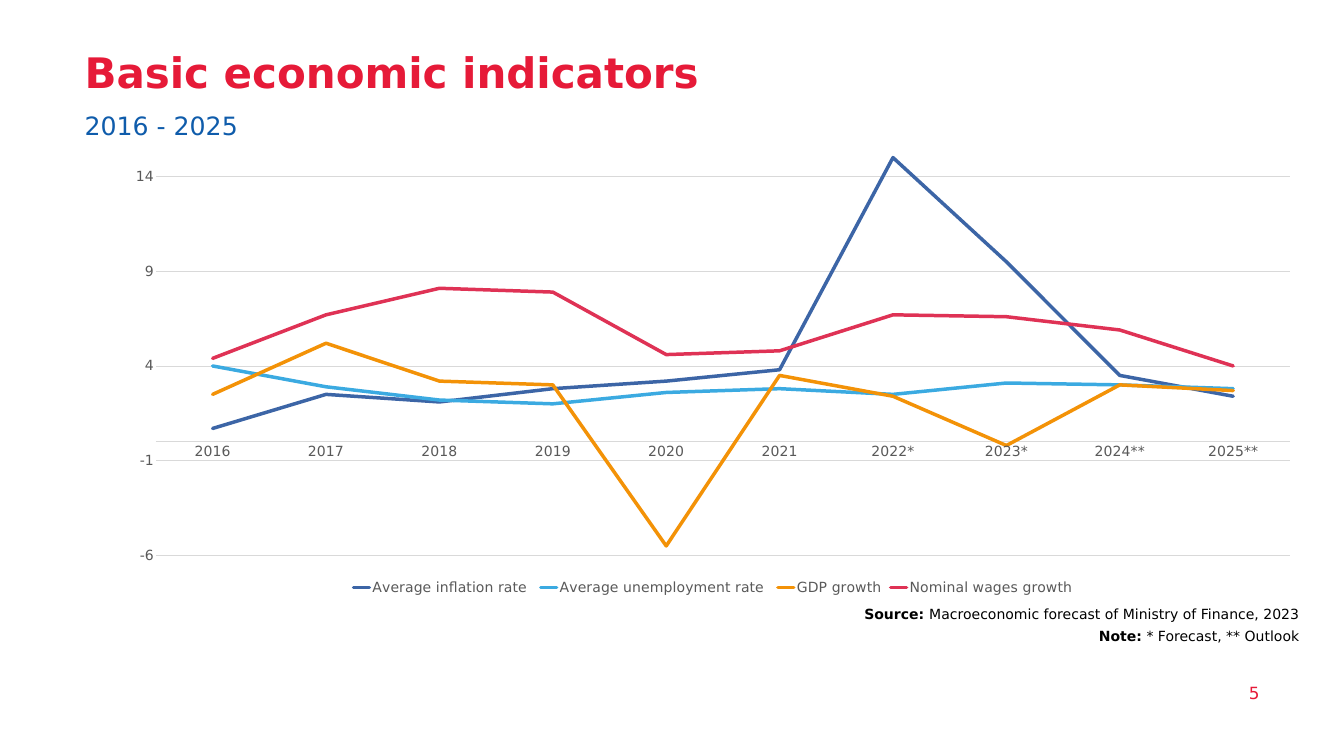
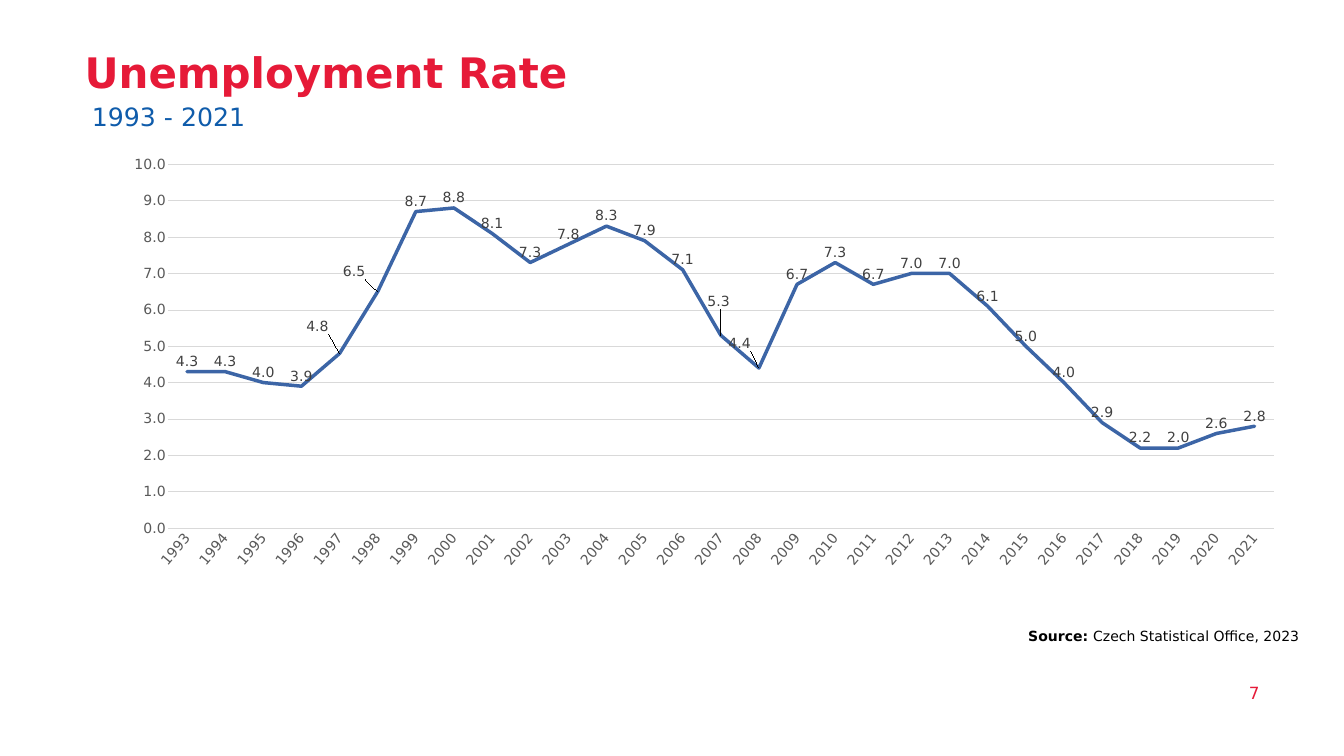
"""Build two slides of line charts on economic indicators."""
from dataclasses import dataclass, field
from typing import NamedTuple

from pptx import Presentation
from pptx import util as u
from pptx.chart import data as chart_data
from pptx.dml.color import RGBColor
from pptx.enum import chart as charts
from pptx.enum import text
from pptx.oxml import ns, parse_xml

PX = 9525
FONT = "DejaVu Sans"
RED = RGBColor(0xE6, 0x1A, 0x38)
BLUE = RGBColor(0x0F, 0x5C, 0xAB)
BLACK = RGBColor(0, 0, 0)
AXIS_GREY = RGBColor(0x59, 0x59, 0x59)
LABEL_GREY = RGBColor(0x40, 0x40, 0x40)
GRID_GREY = RGBColor(0xD9, 0xD9, 0xD9)
NAVY = RGBColor(0x3C, 0x65, 0xA6)
SKY = RGBColor(0x3B, 0xAA, 0xE1)
ORANGE = RGBColor(0xF3, 0x92, 0x07)
ROSE = RGBColor(0xDF, 0x32, 0x55)
NO_LEADER_LINES = (
    f'<c:extLst {ns.nsdecls("c")}><c:ext uri="{{CE6537A1-D6FC-4f65-9D91-7224C49458BB}}" '
    'xmlns:c15="http://schemas.microsoft.com/office/drawing/2012/chart">'
    '<c15:showLeaderLines val="0"/></c:ext></c:extLst>')


class Box(NamedTuple):
    left: int
    top: int
    width: int
    height: int

    def emu(self) -> list[u.Emu]:
        return [u.Emu(length * PX) for length in self]


class Line(NamedTuple):
    name: str
    color: RGBColor
    values: list[float]


class Scale(NamedTuple):
    minimum: int
    maximum: int
    step: int
    number_format: str


@dataclass
class LineChart:
    kind: charts.XL_CHART_TYPE
    box: Box
    plot: Box
    scale: Scale
    categories: list[str]
    lines: list[Line]
    has_legend: bool = False
    label_angle: int = 0
    shows_values: bool = False
    label_shifts: dict[int, tuple[int, int]] = field(default_factory=dict)
    label_texts: dict[int, str] = field(default_factory=dict)


@dataclass
class ChartSlide:
    title: str
    subtitle: str
    subtitle_box: Box
    number: str
    notes: list[tuple[str, str]]
    chart: LineChart


TITLE_BOX = Box(161, 100, 2238, 185)
NUMBER_BOX = Box(2112, 1287, 287, 64)
NOTES_BOX = Box(214, 1142, 2261, 85)

SLIDES = [
    ChartSlide(
        "Basic economic indicators", "2016 - 2025", Box(161, 210, 2260, 64), "5",
        [("Source: ", "Macroeconomic forecast of Ministry of Finance, 2023"),
         ("Note:", " * Forecast, ** Outlook")],
        LineChart(
            charts.XL_CHART_TYPE.LINE, Box(214, 209, 2288, 931), Box(297, 228, 2160, 830),
            Scale(-6, 17, 5, "General"),
            [*map(str, range(2016, 2022)), "2022*", "2023*", "2024**", "2025**"],
            [Line("Average inflation rate ", NAVY,
                  [0.7, 2.5, 2.1, 2.8, 3.2, 3.8, 15, 9.5, 3.5, 2.4]),
             Line("Average unemployment rate ", SKY,
                  [4, 2.9, 2.2, 2, 2.6, 2.8, 2.5, 3.1, 3, 2.8]),
             Line("GDP growth", ORANGE,
                  [2.5, 5.2, 3.2, 3, -5.5, 3.5, 2.4, -0.2, 3, 2.7]),
             Line("Nominal wages growth", ROSE,
                  [4.4, 6.7, 8.1, 7.9, 4.6, 4.8, 6.7, 6.6, 5.9, 4])],
            has_legend=True)),
    ChartSlide(
        "Unemployment Rate", "1993 - 2021", Box(175, 193, 2260, 64), "7",
        [("Source: ", "Czech Statistical Office, 2023")],
        LineChart(
            charts.XL_CHART_TYPE.LINE_STACKED, Box(211, 282, 2260, 816),
            Box(320, 313, 2106, 693), Scale(0, 10, 1, "0.0"),
            [str(year) for year in range(1993, 2022)],
            [Line("Series 1", NAVY,
                  [4.3, 4.3, 4.0, 3.9, 4.8, 6.5, 8.7, 8.8, 8.1, 7.3,
                   7.8, 8.3, 7.9, 7.1, 5.3, 4.4, 6.7, 7.3, 6.7, 7.0,
                   7.0, 6.1, 5.0, 4.0, 2.9, 2.2, 2.2, 2.6, 2.8])],
            label_angle=-50, shows_values=True,
            label_shifts={4: (-42, -33), 5: (-45, -19), 14: (-4, -45), 15: (-37, -28)},
            label_texts={26: "2.0"})),
]


def style_font(font, size: int, color: RGBColor, bold: bool = False) -> None:
    """Give a font the shared face with a size, colour and weight."""
    font.name = FONT
    font.size = u.Pt(size)
    font.bold = bold
    font.color.rgb = color


def write_text(shape, box: Box, paragraphs: list[list[tuple[str, bool]]], size: int,
               color: RGBColor, anchor=text.MSO_ANCHOR.TOP,
               alignment=text.PP_ALIGN.LEFT, spacing: float = 1.0) -> None:
    """Place a shape and fill it with paragraphs of plain and bold runs."""
    shape.left, shape.top, shape.width, shape.height = box.emu()
    frame = shape.text_frame
    frame.word_wrap = True
    frame.auto_size = text.MSO_AUTO_SIZE.NONE
    frame.vertical_anchor = anchor
    frame.margin_left = frame.margin_top = frame.margin_right = frame.margin_bottom = 0
    for index, runs in enumerate(paragraphs):
        paragraph = frame.add_paragraph() if index else frame.paragraphs[0]
        paragraph.alignment = alignment
        paragraph.line_spacing = spacing
        paragraph.space_before = u.Pt(0)
        for words, bold in runs:
            run = paragraph.add_run()
            run.text = words
            style_font(run.font, size, color, bold)


def set_layout(parent, position: int, **settings) -> None:
    """Put a manual layout into a chart element."""
    for layout in parent.findall(ns.qn("c:layout")):
        parent.remove(layout)
    values = "".join(f'<c:{name} val="{value}"/>' for name, value in settings.items())
    parent.insert(position, parse_xml(
        f'<c:layout {ns.nsdecls("c")}><c:manualLayout>{values}</c:manualLayout></c:layout>'))


def style_axes(chart, content: LineChart) -> None:
    """Format both axes and the gridlines."""
    category_axis, value_axis = chart.category_axis, chart.value_axis
    for axis in (category_axis, value_axis):
        axis.major_tick_mark = axis.minor_tick_mark = charts.XL_TICK_MARK.NONE
        style_font(axis.tick_labels.font, 20, AXIS_GREY)
    if content.label_angle:
        body = category_axis._element.find(".//" + ns.qn("a:bodyPr"))
        body.set("rot", str(content.label_angle * 60000))
    category_axis.has_major_gridlines = False
    value_axis.has_major_gridlines = True
    for line in (category_axis.format.line, value_axis.major_gridlines.format.line):
        line.color.rgb = GRID_GREY
        line.width = u.Pt(0.75)
    value_axis.format.line.fill.background()
    scale = content.scale
    value_axis.minimum_scale = scale.minimum
    value_axis.maximum_scale = scale.maximum
    value_axis.major_unit = scale.step
    value_axis.tick_labels.number_format = scale.number_format
    value_axis.tick_labels.number_format_is_linked = False


def label_values(series, content: LineChart) -> None:
    """Show the values above the points, with shifted and reworded labels."""
    labels = series.data_labels
    labels.show_value = True
    labels.position = charts.XL_LABEL_POSITION.ABOVE
    labels.number_format = content.scale.number_format
    labels.number_format_is_linked = False
    style_font(labels.font, 20, LABEL_GREY)
    for index, words in content.label_texts.items():
        label = series.points[index].data_label
        label.text_frame.text = words
        style_font(label.text_frame.paragraphs[0].runs[0].font, 20, LABEL_GREY)
        label.position = charts.XL_LABEL_POSITION.ABOVE
    for index in content.label_shifts:
        label = series.points[index].data_label
        style_font(label.font, 20, LABEL_GREY)
        label.position = charts.XL_LABEL_POSITION.ABOVE
    group = series._element.find(ns.qn("c:dLbls"))
    for element in group.findall(ns.qn("c:dLbl")):
        index = int(element.find(ns.qn("c:idx")).get("val"))
        if index in content.label_shifts:
            x, y = content.label_shifts[index]
            set_layout(element, 1, x=x / content.box.width, y=y / content.box.height)
    for leader_lines in group.findall(ns.qn("c:showLeaderLines")):
        group.remove(leader_lines)
    group.append(parse_xml(NO_LEADER_LINES))


def add_line_chart(slide, content: LineChart) -> None:
    """Add a line chart."""
    data = chart_data.CategoryChartData()
    data.categories = content.categories
    for line in content.lines:
        data.add_series(line.name, line.values)
    chart = slide.shapes.add_chart(content.kind, *content.box.emu(), data).chart
    chart.has_title = False
    style_font(chart.font, 20, AXIS_GREY)
    chart.has_legend = content.has_legend
    if content.has_legend:
        chart.legend.position = charts.XL_LEGEND_POSITION.BOTTOM
        chart.legend.include_in_layout = False
        style_font(chart.legend.font, 20, AXIS_GREY)
    style_axes(chart, content)
    plot = chart.plots[0]
    plot.vary_by_categories = False
    for series, line in zip(plot.series, content.lines):
        series.smooth = False
        series.marker.style = charts.XL_MARKER_STYLE.NONE
        series.format.line.color.rgb = line.color
        series.format.line.width = u.Pt(5)
        series._element.find(".//" + ns.qn("a:ln")).set("cap", "rnd")
        if content.shows_values:
            label_values(series, content)
    box, area = content.box, content.plot
    set_layout(chart._chartSpace.find(".//" + ns.qn("c:plotArea")), 0,
               layoutTarget="inner", xMode="edge", yMode="edge",
               x=(area.left - box.left) / box.width, y=(area.top - box.top) / box.height,
               w=area.width / box.width, h=area.height / box.height)


def add_chart_slide(presentation, content: ChartSlide) -> None:
    """Add a slide with title, subtitle, chart, notes and number."""
    slide = presentation.slides.add_slide(presentation.slide_layouts.get_by_name("Comparison"))
    title, subtitle, spare_left, notes, spare_right = slide.placeholders
    for spare in (spare_left, spare_right):
        spare.element.getparent().remove(spare.element)
    write_text(title, TITLE_BOX, [[(content.title, True)]], 60, RED, spacing=0.9)
    write_text(subtitle, content.subtitle_box, [[(content.subtitle, False)]], 36, BLUE)
    number = slide.shapes.add_textbox(*NUMBER_BOX.emu())
    write_text(number, NUMBER_BOX, [[(content.number, False)]], 24, RED,
               text.MSO_ANCHOR.MIDDLE, text.PP_ALIGN.RIGHT)
    write_text(notes, NOTES_BOX, [[(lead, True), (rest, False)] for lead, rest in content.notes],
               20, BLACK, text.MSO_ANCHOR.BOTTOM, text.PP_ALIGN.RIGHT, 1.3)
    add_line_chart(slide, content.chart)


def main() -> None:
    """Build and save the presentation."""
    presentation = Presentation()
    presentation.slide_width = u.Emu(2560 * PX)
    presentation.slide_height = u.Emu(1440 * PX)
    for content in SLIDES:
        add_chart_slide(presentation, content)
    presentation.save("out.pptx")


if __name__ == "__main__":
    main()
